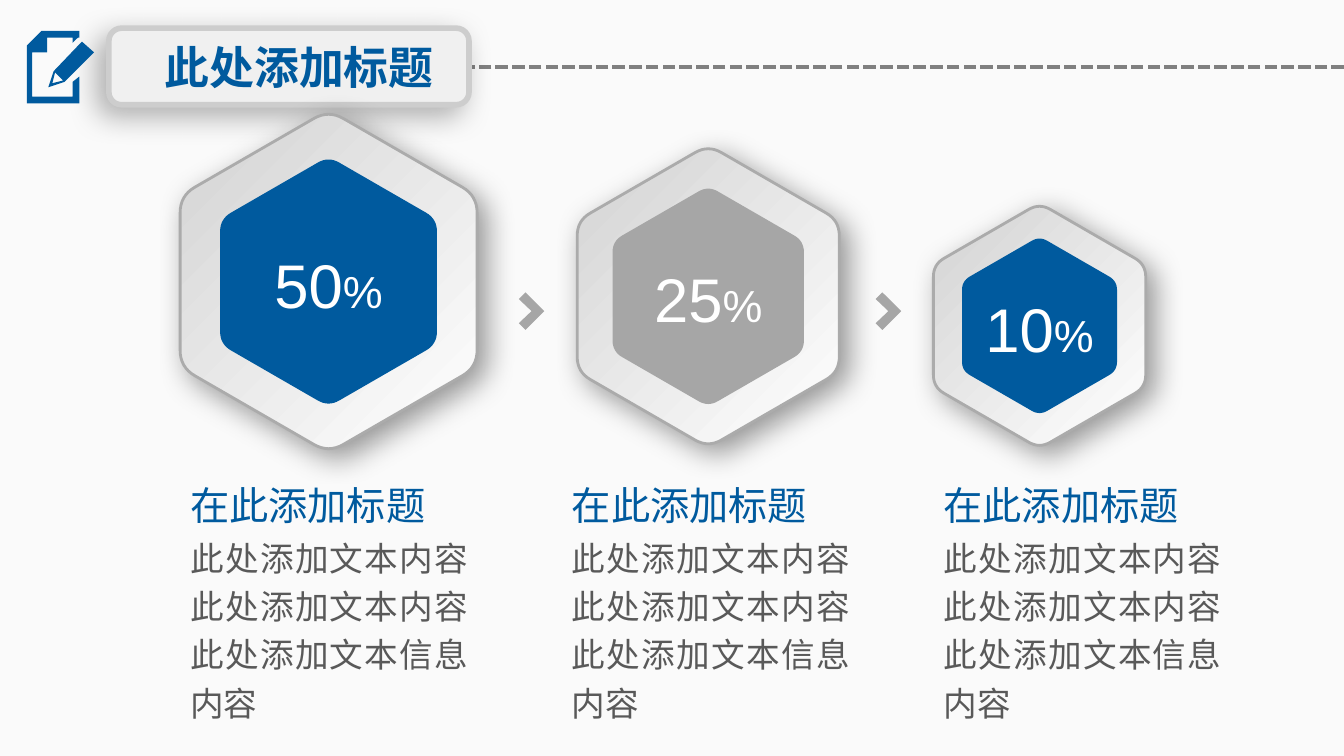
from dataclasses import dataclass
from math import cos, pi, sin, sqrt

from lxml import etree
from pptx import Presentation
from pptx.dml.color import RGBColor
from pptx.enum.dml import MSO_LINE
from pptx.enum.shapes import MSO_CONNECTOR, MSO_SHAPE
from pptx.enum.text import MSO_ANCHOR, PP_ALIGN
from pptx.oxml.ns import qn
from pptx.util import Inches, Pt

CENTER, JUSTIFY, LEFT = PP_ALIGN.CENTER, PP_ALIGN.JUSTIFY, PP_ALIGN.LEFT
MIDDLE, TOP = MSO_ANCHOR.MIDDLE, MSO_ANCHOR.TOP
DASH = MSO_LINE.SQUARE_DOT
STRAIGHT, ROUNDED = MSO_CONNECTOR.STRAIGHT, MSO_SHAPE.ROUNDED_RECTANGLE

# The slide is a grid of 100 columns by 56.25 rows; all lengths are in cells.
COLUMNS, ROWS = 100, 56.25
CELL = Inches(0.1)
FONT = "Arial"
BLUE, GREY, WHITE, BODY = "005A9E", "A6A6A6", "FFFFFF", "595959"
INNER_SHARE = 0.73
CORNER_SHARE = 0.1
HEADING = "在此添加标题"
DETAIL = "此处添加文本内容此处添加文本内容此处添加文本信息内容"

Point = tuple[float, float]


@dataclass
class Step:
    percent: str
    color: str
    center: Point
    width: float
    text_left: float


STEPS = [
    Step("50", BLUE, (24.45, 20.95), 22.1, 13.45),
    Step("25", GREY, (52.7, 22.05), 19.5, 41.85),
    Step("10", BLUE, (77.35, 24.25), 15.8, 69.5),
]
CHEVRON_TIPS = [(40.5, 23.15), (67.05, 23.15)]
CHEVRON = [(0, 0), (-1.4, -1.4), (-1.9, -0.9), (-0.95, 0), (-1.9, 0.9), (-1.4, 1.4)]
PAGE = [(5.4, 7.2), (2.4, 7.2), (2.4, 3.9), (3.5, 3.9), (3.5, 2.8), (5.4, 2.8),
        (5.4, 3.2), (5.8, 2.8), (5.9, 2.8), (5.9, 2.3), (3.1, 2.3), (2, 3.4),
        (2, 7.7), (5.9, 7.7), (5.9, 5.7), (5.4, 6.1)]
PEN = [(4, 5.3), (3.6, 6.5), (4.8, 6.1), (7, 3.9), (6.1, 3.1)]
PEN_TIP = [(4.7, 6), (3.9, 6.2), (4.1, 5.4)]


def cells(count: float) -> int:
    return round(count * CELL)


def rgb(color: str) -> RGBColor:
    return RGBColor.from_string(color)


def set_gradient(fill, start: str, end: str, angle: float) -> None:
    """Fill from start to end; angle runs counter-clockwise from rightwards."""
    fill.gradient()
    fill.gradient_angle = angle
    for stop, color in zip(fill.gradient_stops, (start, end)):
        stop.color.rgb = rgb(color)


def set_outline(shape, color: str, width: float) -> None:
    shape.line.color.rgb = rgb(color)
    shape.line.width = Pt(width)


def add_shadow(shape, alpha: int, distance: float, direction: int) -> None:
    shape.shadow.inherit = False
    effects = shape.element.spPr.find(qn("a:effectLst"))
    outer = etree.SubElement(
        effects, qn("a:outerShdw"), blurRad=str(Pt(16)), dist=str(Pt(distance)),
        dir=str(direction * 60000), algn="ctr", rotWithShape="0")
    black = etree.SubElement(outer, qn("a:srgbClr"), val="000000")
    etree.SubElement(black, qn("a:alpha"), val=str(alpha * 1000))


def add_outline_shape(shapes, *contours: list[Point], color: str = WHITE):
    first, *holes = [[(cells(x), cells(y)) for x, y in c] for c in contours]
    builder = shapes.build_freeform(*first[0], scale=1.0)
    builder.add_line_segments(first[1:], close=True)
    for hole in holes:
        builder.move_to(*hole[0])
        builder.add_line_segments(hole[1:], close=True)
    shape = builder.convert_to_shape()
    shape.fill.solid()
    shape.fill.fore_color.rgb = rgb(color)
    shape.line.fill.background()
    shape.shadow.inherit = False
    return shape


def rounded_hexagon(center: Point, width: float) -> list[Point]:
    """Points of a regular hexagon standing on a corner, its corners rounded."""
    radius = width / sqrt(3)
    corners = [(center[0] + radius * sin(i * pi / 3),
                center[1] - radius * cos(i * pi / 3)) for i in range(6)]
    points = []
    for i, corner in enumerate(corners):
        before, after = corners[i - 1], corners[(i + 1) % 6]
        for step in range(9):
            t = step / 8
            points.append(tuple(
                c + CORNER_SHARE * ((1 - t) ** 2 * (b - c) + t ** 2 * (a - c))
                for b, c, a in zip(before, corner, after)))
    return points


def style_run(run, size: float, color: str, bold: bool = False) -> None:
    run.font.name = FONT
    run.font.size = Pt(size)
    run.font.color.rgb = rgb(color)
    run.font.bold = bold


def add_text(shapes, box: tuple, parts: list[tuple[str, float]], color: str,
             align=LEFT, anchor=TOP, spacing: float = 1.0) -> None:
    frame = shapes.add_textbox(*map(cells, box)).text_frame
    frame.word_wrap = True
    frame.vertical_anchor = anchor
    frame.margin_left = frame.margin_right = cells(0.7)
    frame.margin_top = frame.margin_bottom = cells(0.4)
    paragraph = frame.paragraphs[0]
    paragraph.alignment = align
    paragraph.line_spacing = spacing
    for text, size in parts:
        run = paragraph.add_run()
        run.text = text
        style_run(run, size, color)


def add_header(slide) -> None:
    shapes = slide.shapes
    rule = shapes.add_connector(
        STRAIGHT, cells(COLUMNS), cells(5), cells(31.9), cells(5))
    set_outline(rule, "808080", 2.25)
    rule.line.dash_style = DASH
    etree.SubElement(rule.element.spPr, qn("a:effectLst"))

    plate = shapes.add_shape(ROUNDED, *map(cells, (8.1, 2.1, 26.8, 5.7)))
    set_gradient(plate.fill, "F0F0F0", "F1F1F1", 315)
    set_outline(plate, "CDCDCD", 3)
    add_shadow(plate, 30, 7, 135)

    title = shapes.title
    title.left, title.top, title.width, title.height = map(
        cells, (11.25, 2.45, 22.2, 5))
    frame = title.text_frame
    frame.text = "此处添加标题"
    frame.word_wrap = False
    frame.vertical_anchor = MIDDLE
    frame.paragraphs[0].alignment = LEFT
    style_run(frame.paragraphs[0].runs[0], 24, BLUE, bold=True)
    title.element.getparent().append(title.element)  # in front of its plate

    add_outline_shape(shapes, PAGE, color=BLUE)
    add_outline_shape(shapes, PEN, PEN_TIP, color=BLUE)


def add_step(shapes, step: Step) -> None:
    x, y = step.center
    rim = add_outline_shape(shapes, rounded_hexagon(step.center, step.width))
    set_gradient(rim.fill, "D3D3D3", WHITE, 315)
    set_outline(rim, "ABABAB", 1.5)
    add_shadow(rim, 40, 6, 45)
    core = rounded_hexagon(step.center, step.width * INNER_SHARE)
    add_outline_shape(shapes, core, color=step.color)
    add_text(shapes, (x - 10.1, y - 3, 20.2, 6.3), [(step.percent, 33), ("%", 24)],
             WHITE, CENTER, MIDDLE)
    add_text(shapes, (step.text_left, 35.4, 22.8, 4.3), [(HEADING, 21)], BLUE)
    add_text(shapes, (step.text_left, 39, 22.1, 15.3), [(DETAIL, 18)], BODY,
             JUSTIFY, spacing=1.2)


def main() -> None:
    deck = Presentation()
    deck.slide_width, deck.slide_height = cells(COLUMNS), cells(ROWS)
    slide = deck.slides.add_slide(deck.slide_layouts[5])
    set_gradient(slide.background.fill, "FAFAFA", "FCFCFC", 270)
    add_header(slide)
    for step in STEPS:
        add_step(slide.shapes, step)
    for tip_x, tip_y in CHEVRON_TIPS:
        add_outline_shape(
            slide.shapes, [(tip_x + x, tip_y + y) for x, y in CHEVRON], color=GREY)
    deck.save("out.pptx")


if __name__ == "__main__":
    main()
